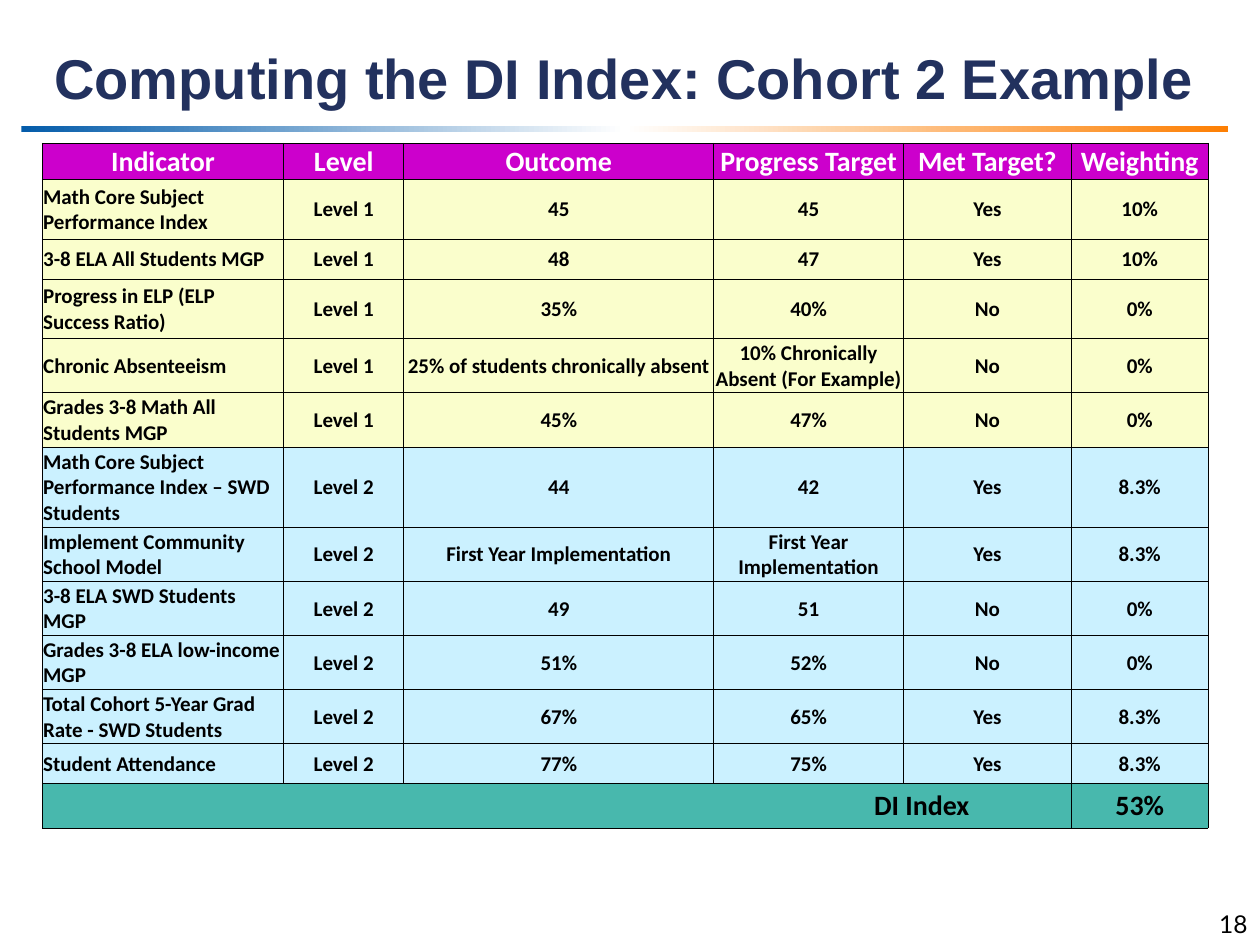
from copy import deepcopy

from lxml.etree import SubElement
from pptx import Presentation
from pptx.dml.color import RGBColor
from pptx.enum.shapes import MSO_SHAPE
from pptx.enum.text import MSO_ANCHOR, MSO_AUTO_SIZE, PP_ALIGN
from pptx.oxml.ns import qn
from pptx.util import Cm, Pt

NAVY = RGBColor(0x22, 0x31, 0x5E)
BLUE = RGBColor(0x04, 0x5C, 0xAA)
ORANGE = RGBColor(0xFD, 0x7F, 0x03)
WHITE = RGBColor(0xFF, 0xFF, 0xFF)
BLACK = RGBColor(0x00, 0x00, 0x00)
MAGENTA = RGBColor(0xCC, 0x00, 0xCC)
YELLOW = RGBColor(0xFA, 0xFE, 0xCC)
SKY = RGBColor(0xCB, 0xF1, 0xFF)
TEAL = RGBColor(0x48, 0xB8, 0xAD)

HEADER = ["Indicator", "Level", "Outcome", "Progress Target", "Met Target?", "Weighting"]
INDICATORS = [
    ("Math Core Subject Performance Index", 1, "45", "45", "Yes", "10%"),
    ("3-8 ELA All Students MGP", 1, "48", "47", "Yes", "10%"),
    ("Progress in ELP (ELP Success Ratio)", 1, "35%", "40%", "No", "0%"),
    ("Chronic Absenteeism", 1, "25% of students chronically absent",
     "10% Chronically Absent (For Example)", "No", "0%"),
    ("Grades 3-8 Math All Students MGP", 1, "45%", "47%", "No", "0%"),
    ("Math Core Subject Performance Index – SWD Students", 2, "44", "42", "Yes", "8.3%"),
    ("Implement Community School Model", 2, "First Year Implementation",
     "First Year Implementation", "Yes", "8.3%"),
    ("3-8 ELA SWD Students MGP", 2, "49", "51", "No", "0%"),
    ("Grades 3-8 ELA low-income MGP", 2, "51%", "52%", "No", "0%"),
    ("Total Cohort 5-Year Grad Rate - SWD Students", 2, "67%", "65%", "Yes", "8.3%"),
    ("Student Attendance", 2, "77%", "75%", "Yes", "8.3%"),
]
TOTAL = ["DI Index", "", "", "", "", "53%"]
LEVEL_FILLS = {1: YELLOW, 2: SKY}
COL_WIDTHS = [4.87, 2.42, 6.25, 3.82, 3.39, 2.75]
ROW_HEIGHTS = [0.73, 1.2, 0.81, 1.2, 1.09, 1.09, 1.62, 1.09, 1.09, 1.09, 1.09, 0.81, 0.89]


class SlideBuilder:
    title_font = {"name": "Arial", "size": Pt(32), "bold": True}
    number_font = {"name": "Lato", "size": Pt(14), "bold": False}
    body_font = {"name": "Calibri", "size": Pt(12), "bold": True}
    large_font = {"name": "Calibri", "size": Pt(16), "bold": True}
    cell_format = {
        "margin_left": Cm(0.02), "margin_right": Cm(0.02),
        "margin_top": Cm(0.02), "margin_bottom": 0,
        "vertical_anchor": MSO_ANCHOR.MIDDLE,
    }

    def __init__(self, prs):
        self.s = prs.slides.add_slide(prs.slide_layouts[5])

    def apply(self, target, values):
        for name, value in values.items():
            setattr(target, name, value)

    def add_text(self, tf, text, font, color, align):
        p = tf.paragraphs[0]
        p.alignment = align
        r = p.add_run()
        r.text = text
        self.apply(r.font, font)
        r.font.color.rgb = color
        return p

    def place(self, sp, left, top, width, height):
        self.apply(sp, {"left": Cm(left), "top": Cm(top),
                        "width": Cm(width), "height": Cm(height)})

    def gradient_bar(self, left, top, width, height, colors):
        sp = self.s.shapes.add_shape(
            MSO_SHAPE.RECTANGLE, Cm(left), Cm(top), Cm(width), Cm(height))
        sp.shadow.inherit = False
        sp.line.fill.background()
        sp.fill.gradient()
        sp.fill.gradient_angle = 0
        gs_list = sp.element.spPr.find(qn("a:gradFill")).find(qn("a:gsLst"))
        gs_list.append(deepcopy(gs_list[-1]))
        for i, (stop, color) in enumerate(zip(sp.fill.gradient_stops, colors)):
            stop.position = i / (len(colors) - 1)
            stop.color.rgb = color

    def title(self, text, *box):
        sp = self.s.shapes.title
        self.place(sp, *box)
        tf = sp.text_frame
        self.apply(tf, {"word_wrap": True, "auto_size": MSO_AUTO_SIZE.NONE,
                        "vertical_anchor": MSO_ANCHOR.BOTTOM})
        p = self.add_text(tf, text, self.title_font, NAVY, PP_ALIGN.LEFT)
        p.line_spacing = Pt(36)

    def page_number(self, text, left, top, width, height):
        sp = self.s.shapes.add_textbox(Cm(left), Cm(top), Cm(width), Cm(height))
        sp.text_frame.word_wrap = True
        self.add_text(sp.text_frame, text, self.number_font, BLACK, PP_ALIGN.RIGHT)

    def border(self, cell):
        tc_pr = cell._tc.get_or_add_tcPr()
        for side in ("lnL", "lnR", "lnT", "lnB"):
            ln = SubElement(tc_pr, qn(f"a:{side}"), w=str(Pt(0.5)))
            fill = SubElement(ln, qn("a:solidFill"))
            SubElement(fill, qn("a:srgbClr"), val=str(BLACK))

    def cell(self, cell, text, fill, font, color, align):
        self.apply(cell, self.cell_format)
        self.border(cell)
        cell.fill.solid()
        cell.fill.fore_color.rgb = fill
        if text:
            self.add_text(cell.text_frame, text, font, color, align)

    def table(self, left, top):
        rows = [(HEADER, MAGENTA, self.large_font, WHITE)]
        for name, level, *values in INDICATORS:
            rows.append(([name, f"Level {level}", *values],
                         LEVEL_FILLS[level], self.body_font, BLACK))
        rows.append((TOTAL, TEAL, self.large_font, BLACK))

        table = self.s.shapes.add_table(
            len(rows), len(HEADER), Cm(left), Cm(top),
            Cm(sum(COL_WIDTHS)), Cm(sum(ROW_HEIGHTS))).table
        table.horz_banding = False
        for column, width in zip(table.columns, COL_WIDTHS):
            column.width = Cm(width)
        for row, height in zip(table.rows, ROW_HEIGHTS):
            row.height = Cm(height)
        for i, (texts, fill, font, color) in enumerate(rows):
            for j, text in enumerate(texts):
                is_name = j == 0 and 0 < i < len(rows) - 1
                align = PP_ALIGN.LEFT if is_name else PP_ALIGN.CENTER
                self.cell(table.cell(i, j), text, fill, font, color, align)

        last = len(rows) - 1
        label = table.cell(last, 0)
        label.merge(table.cell(last, len(HEADER) - 2))
        label.margin_right = Cm(2.06)
        label.text_frame.paragraphs[0].alignment = PP_ALIGN.RIGHT


def main():
    prs = Presentation()
    prs.slide_width, prs.slide_height = Cm(25.4), Cm(19.05)
    slide = SlideBuilder(prs)
    slide.gradient_bar(0.43, 2.54, 24.33, 0.13, [BLUE, WHITE, ORANGE])
    slide.page_number("18", 19.48, 18.21, 5.92, 0.84)
    slide.title("Computing the DI Index: Cohort 2 Example", 0.84, 0, 23.93, 2.36)
    slide.table(0.85, 2.89)
    prs.save("out.pptx")


if __name__ == "__main__":
    main()
